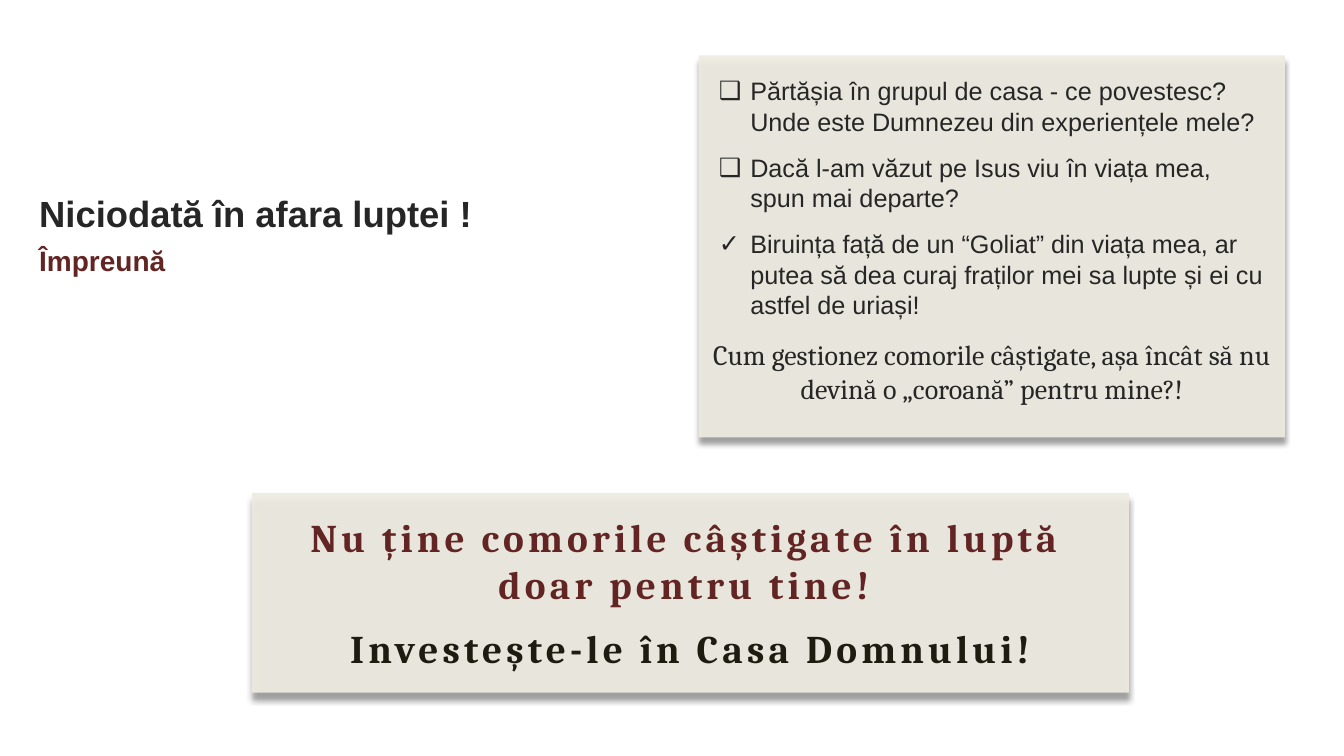
from dataclasses import dataclass
from lxml.etree import SubElement as Sub
from pptx import Presentation
from pptx.dml.color import RGBColor as RGB
from pptx.enum.shapes import MSO_SHAPE as Shape
from pptx.enum.text import MSO_ANCHOR as Anchor, MSO_AUTO_SIZE as Fit, PP_ALIGN as Align
from pptx.oxml.ns import qn
from pptx.util import Pt


@dataclass
class Theme:
    ink: RGB = RGB(0x26, 0x26, 0x26)
    wine: RGB = RGB(0x63, 0x25, 0x23)
    dark: RGB = RGB(0x1E, 0x1C, 0x11)
    sand: RGB = RGB(0xEE, 0xEC, 0xE1)
    sans: str = "Arial"
    serif: str = "Cambria"
    title: int = 26
    sub: int = 20
    body: int = 18
    quote: int = 20
    call: int = 28


theme = Theme()
deck = Presentation()
deck.slide_width, deck.slide_height = Pt(960), Pt(540)
slide = deck.slides.add_slide(deck.slide_layouts[6])


def add_card(x, y, w, h):
    card = slide.shapes.add_shape(Shape.RECTANGLE, Pt(x), Pt(y), Pt(w), Pt(h))
    card.fill.solid()
    card.fill.fore_color.rgb = theme.sand
    card.line.fill.background()
    card.shadow.inherit = False
    props = card.element.spPr
    Sub(props.find(".//" + qn("a:srgbClr")), qn("a:alpha"), val="93000")
    glow = Sub(props.find(qn("a:effectLst")), qn("a:outerShdw"), blurRad=str(Pt(4)),
               dist=str(Pt(5)), dir="5400000", algn="t", rotWithShape="0")
    tone = Sub(glow, qn("a:srgbClr"), val="000000")
    Sub(tone, qn("a:alpha"), val="40000")
    return card


def add_text(box, lines, face, bold=False, align=Align.LEFT):
    frame = box.text_frame
    frame.word_wrap = True
    frame.vertical_anchor = Anchor.TOP
    frame.text = "\n".join(text for text, size, color in lines)
    for para, (text, size, color) in zip(frame.paragraphs, lines):
        para.alignment = align
        font = para.runs[0].font
        font.name, font.size, font.bold = face, Pt(size), bold
        font.color.rgb = color
    return frame


# Heading
head = slide.shapes.add_textbox(Pt(20.9), Pt(133.2), Pt(380.2), Pt(69.1))
frame = add_text(head, [("Niciodată în afara luptei !", theme.title, theme.ink),
                        ("Împreună", theme.sub, theme.wine)], theme.sans, bold=True)
frame.auto_size = Fit.SHAPE_TO_FIT_TEXT
frame.paragraphs[0].space_after = Pt(6)

# Call to action
add_card(180, 352.1, 626.4, 142.6)
call = slide.shapes.add_textbox(Pt(180), Pt(362.9), Pt(626.4), Pt(121))
frame = add_text(call, [("Nu ține comorile câștigate în luptă ", theme.call, theme.wine),
                        ("doar pentru tine! ", theme.call, theme.wine),
                        ("Investește-le în Casa Domnului!", theme.call, theme.dark)],
                 theme.serif, bold=True, align=Align.CENTER)
frame.auto_size = Fit.SHAPE_TO_FIT_TEXT
frame.paragraphs[2].space_before = Pt(12)
for para in frame.paragraphs:
    para.runs[0].font._element.set("spc", "300")

# Bulleted questions
points = [
    ("❑", "Părtășia în grupul de casa - ce povestesc? Unde este Dumnezeu din experiențele mele?"),
    ("❑", "Dacă l-am văzut pe Isus viu în viața mea, spun mai departe?"),
    ("✓", "Biruința față de un “Goliat” din viața mea, ar putea să dea curaj "
          "fraților mei sa lupte și ei cu astfel de uriași!"),
]
card = add_card(499, 39.6, 419, 272.9)
frame = add_text(card, [(text, theme.body, theme.ink) for mark, text in points], theme.sans)
frame.margin_left = frame.margin_top = frame.margin_right = Pt(14.4)
frame.margin_bottom = Pt(5.76)
for i, (para, (mark, text)) in enumerate(zip(frame.paragraphs, points)):
    props = para._p.get_or_add_pPr()
    props.set("marL", str(Pt(22.5)))
    props.set("indent", str(-Pt(22.5)))
    Sub(props, qn("a:buFont"), typeface=theme.sans)
    Sub(props, qn("a:buChar"), char=mark)
    if i:
        para.space_before = Pt(11.5)

# Closing question
quote = slide.shapes.add_textbox(Pt(499), Pt(237.6), Pt(419), Pt(55.4))
frame = add_text(quote, [("Cum gestionez comorile câștigate, așa încât să nu devină "
                          "o „coroană” pentru mine?!", theme.quote, theme.ink)],
                 theme.serif, align=Align.CENTER)
frame.auto_size = Fit.SHAPE_TO_FIT_TEXT

deck.save("out.pptx")
